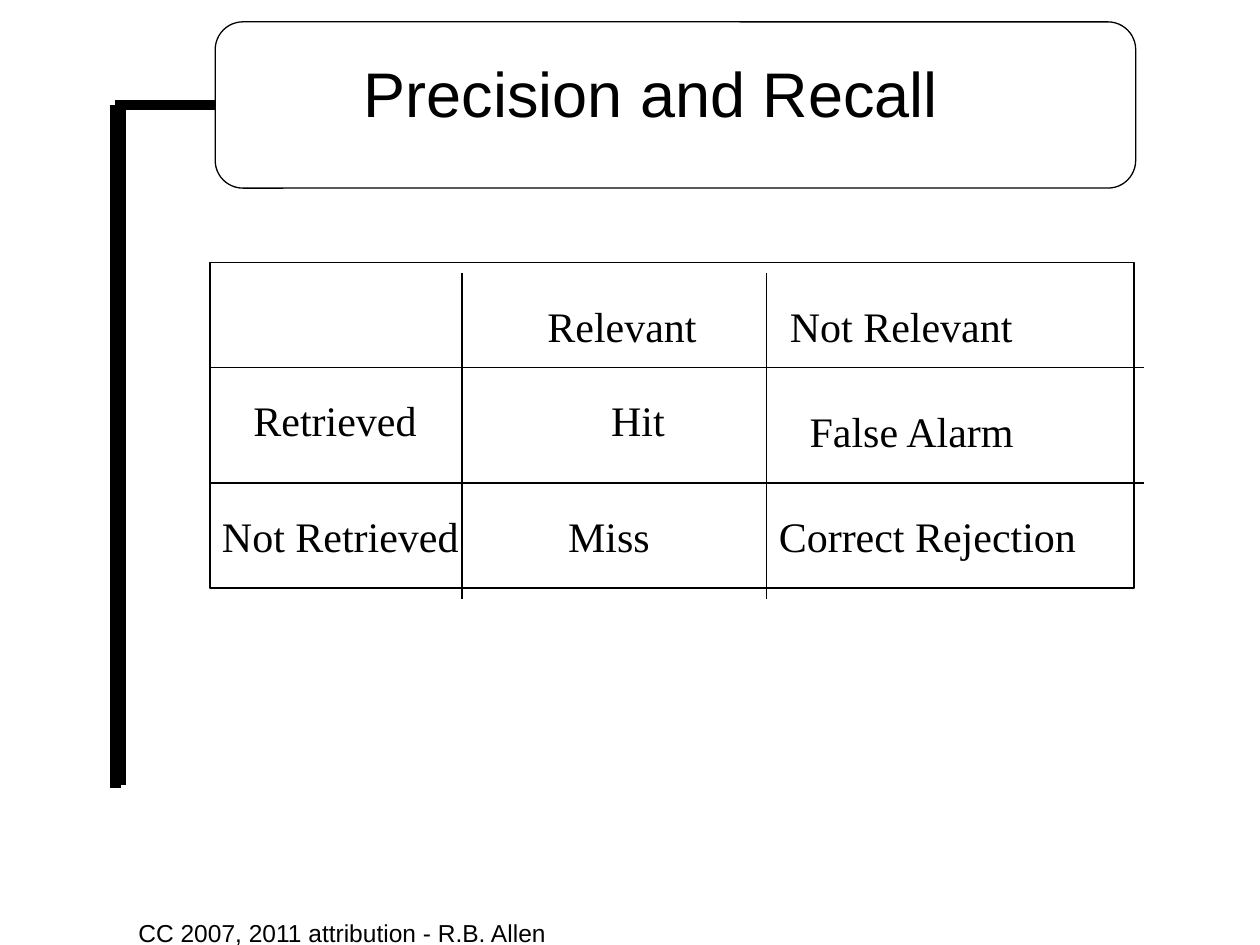
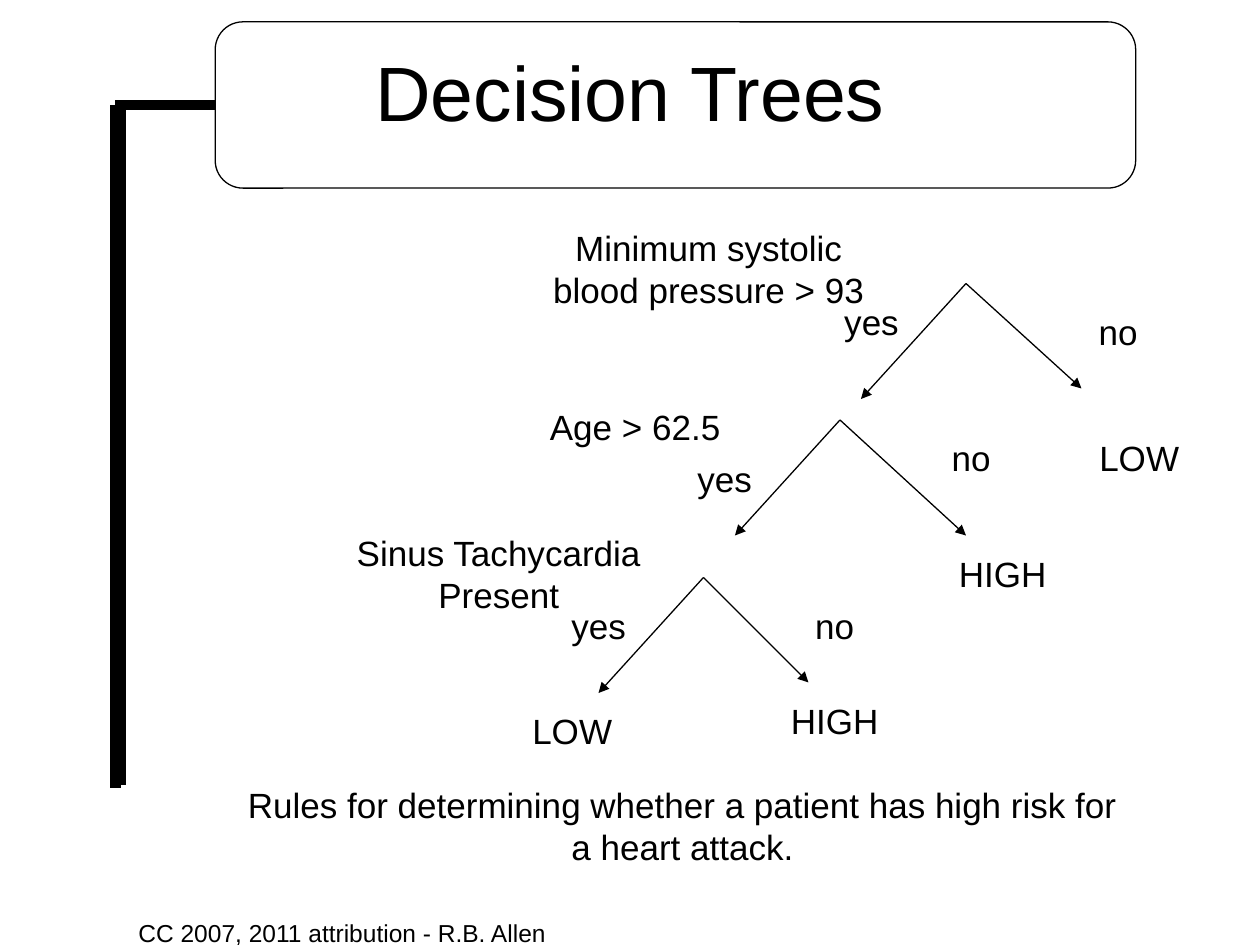
from lxml.etree import SubElement
from pptx import Presentation
from pptx.dml.color import RGBColor
from pptx.enum.shapes import MSO_CONNECTOR, MSO_SHAPE
from pptx.enum.text import MSO_ANCHOR, MSO_AUTO_SIZE, PP_ALIGN
from pptx.oxml.ns import qn
from pptx.util import Pt

COLORS = {"ink": "000000", "page": "FFFFFF"}
SANS, SERIF = "Arial", "Times New Roman"
FOOTER = "CC 2007, 2011 attribution - R.B. Allen"


def color(name):
    return RGBColor.from_string(COLORS[name])


def write(shape, text, size=20, font=SANS, align=PP_ALIGN.CENTER,
          anchor=MSO_ANCHOR.TOP, wrap=True, fit=MSO_AUTO_SIZE.NONE):
    frame = shape.text_frame
    frame.text = text
    frame.word_wrap = wrap
    frame.auto_size = fit
    frame.vertical_anchor = anchor
    para = frame.paragraphs[0]
    para.alignment = align
    para.font.size = Pt(size)
    para.font.name = font
    para.font.color.rgb = color("ink")


class Deck:
    """Holds the shared style and the slide being filled."""

    def __init__(self):
        self.show = Presentation()
        self.show.slide_width = Pt(720)
        self.show.slide_height = Pt(540)
        self.slide = None

    def page(self, title, box, **style):
        """Starts a slide with the title, the frame and the footer."""
        self.slide = self.show.slides.add_slide(self.show.slide_layouts[5])
        back = self.slide.background.fill
        back.solid()
        back.fore_color.rgb = color("page")
        self.frame()
        head = self.slide.shapes.title
        head.left, head.top, head.width, head.height = map(Pt, box)
        write(head, title, **style)
        self.text(FOOTER, 72, 521, 402, 19, size=14, align=PP_ALIGN.LEFT)

    def frame(self):
        self.line((69.25, 448.5), (69.25, 59), 6)
        self.line((66, 450), (66, 60), 6)
        panel = self.box(MSO_SHAPE.FLOWCHART_ALTERNATE_PROCESS,
                         123, 12.5, 526, 95, 0.75)
        self.line((66, 60), (123, 60), 6).end_connect(panel, 1)

    def box(self, kind, x, y, w, h, weight):
        shape = self.slide.shapes.add_shape(kind, Pt(x), Pt(y), Pt(w), Pt(h))
        shape.shadow.inherit = False
        shape.fill.background()
        shape.line.color.rgb = color("ink")
        shape.line.width = Pt(weight)
        return shape

    def line(self, start, end, weight, arrow=False):
        link = self.slide.shapes.add_connector(
            MSO_CONNECTOR.STRAIGHT, *map(Pt, (*start, *end)))
        link.line.color.rgb = color("ink")
        link.line.width = Pt(weight)
        if arrow:
            SubElement(link.line._get_or_add_ln(), qn("a:tailEnd"), type="triangle")
        SubElement(link._element.spPr, qn("a:effectLst"))
        return link

    def text(self, words, x, y, w, h, **style):
        area = self.slide.shapes.add_textbox(Pt(x), Pt(y), Pt(w), Pt(h))
        write(area, words, **style)

    def label(self, words, x, y, w, h, **style):
        """Adds a text box that grows with its text."""
        self.text(words, x, y, w, h, fit=MSO_AUTO_SIZE.SHAPE_TO_FIT_TEXT, **style)


def recall(deck):
    deck.page("Precision and Recall", (84, 18, 576, 69), size=36,
              anchor=MSO_ANCHOR.MIDDLE)
    deck.box(MSO_SHAPE.RECTANGLE, 120, 150, 528, 186, 1)
    for y in (210, 276):
        deck.line((120, y), (654, y), 1)
    for x in (264, 438):
        deck.line((x, 156), (x, 342), 1)
    cells = [
        ("Relevant", 303, 168, 105),
        ("Not Relevant", 441, 168, 148),
        ("Retrieved", 135, 222, 113),
        ("Hit", 339, 222, 51),
        ("False Alarm", 452, 228, 138),
        ("Not Retrieved", 117, 288, 155),
        ("Miss", 312, 288, 72),
        ("Correct Rejection", 435, 288, 190),
    ]
    for words, x, y, w in cells:
        deck.label(words, x, y, w, 36, size=24, font=SERIF, wrap=words == "Miss")


def trees(deck):
    deck.page("Decision Trees", (36, 21.6, 648, 90), size=44)
    forks = [
        ((552, 162), (492, 228), (618, 222)),
        ((480, 240), (420, 306), (552, 306)),
        ((402, 330), (342, 396), (462, 390)),
    ]
    for root, *ends in forks:
        for end in ends:
            deck.line(root, end, 0.75, arrow=True)
    tests = [
        ("Minimum systolic blood pressure > 93", 300, 126, 210, 55.5),
        ("Age > 62.5", 306, 228, 114, 31.5),
        ("Sinus Tachycardia Present", 162, 300, 246, 55.5),
        ("Rules for determining whether a patient has high risk for a heart attack.",
         132, 444, 516, 55.5),
    ]
    for test in tests:
        deck.label(*test)
    marks = {
        "yes": [(468, 168), (384, 258), (312, 342)],
        "no": [(606, 174), (522, 246), (444, 342)],
        "LOW": [(618, 246), (294, 402)],
        "HIGH": [(540, 312), (444, 396)],
    }
    for words, spots in marks.items():
        for x, y in spots:
            deck.label(words, x, y, 60 if words == "yes" else 66, 31.5)


def main():
    deck = Deck()
    recall(deck)
    trees(deck)
    deck.show.save("out.pptx")


if __name__ == "__main__":
    main()
